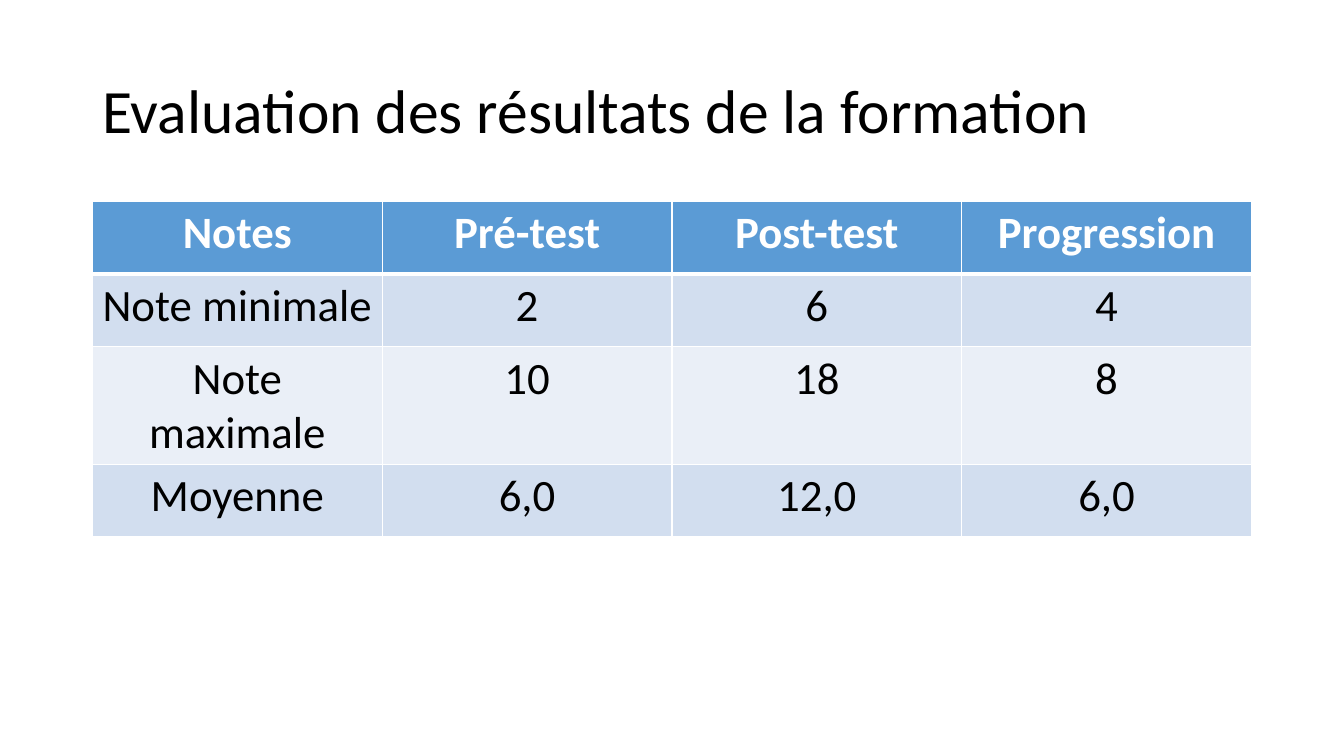
from dataclasses import dataclass

from lxml import etree
from pptx import Presentation
from pptx.dml.color import RGBColor
from pptx.enum.text import MSO_ANCHOR, PP_ALIGN
from pptx.oxml.ns import qn
from pptx.util import Cm, Pt

MIDDLE = MSO_ANCHOR.MIDDLE
CENTER = PP_ALIGN.CENTER
BLANK_LAYOUT = 6


@dataclass(frozen=True)
class Theme:
    """Colours, font and type sizes of the deck."""

    font: str = "Calibri"
    title_size: int = 44
    table_size: int = 32
    ink: str = "000000"
    paper: str = "FFFFFF"
    header: str = "5B9BD5"
    bands: tuple = ("D2DEEF", "EAEFF7")
    rule: float = 1
    header_rule: float = 3


@dataclass(frozen=True)
class Box:
    """A rectangle on the slide, in centimetres."""

    left: float
    top: float
    width: float
    height: float

    def lengths(self):
        """Return left, top, width and height as lengths."""
        return Cm(self.left), Cm(self.top), Cm(self.width), Cm(self.height)


THEME = Theme()
TITLE = "Evaluation des résultats de la formation"
SCORES = (
    ("Notes", "Pré-test", "Post-test", "Progression"),
    ("Note minimale", "2", "6", "4"),
    ("Note maximale", "10", "18", "8"),
    ("Moyenne", "6,0", "12,0", "6,0"),
)


def add_span(para, text, size, colour, bold=False):
    """Add one styled run to a paragraph."""
    span = para.add_run()
    span.text = text
    span.font.name = THEME.font
    span.font.size = Pt(size)
    span.font.bold = bold
    span.font.color.rgb = RGBColor.from_string(colour)


def set_borders(cell, bottom, top):
    """Draw the four borders of a table cell."""
    properties = cell._tc.get_or_add_tcPr()
    widths = {"a:lnL": THEME.rule, "a:lnR": THEME.rule, "a:lnT": top, "a:lnB": bottom}
    for position, (side, width) in enumerate(widths.items()):
        line = etree.Element(qn(side), w=str(Pt(width)))
        fill = etree.SubElement(line, qn("a:solidFill"))
        etree.SubElement(fill, qn("a:srgbClr"), val=THEME.paper)
        properties.insert(position, line)


def add_title(page, box):
    """Place the slide title in its box."""
    frame = page.shapes.add_textbox(*box.lengths()).text_frame
    frame.word_wrap = True
    frame.vertical_anchor = MIDDLE
    para = frame.paragraphs[0]
    para.line_spacing = 0.9
    add_span(para, TITLE, THEME.title_size, THEME.ink)


def add_scores(page, box):
    """Place the table of test scores in its box."""
    table = page.shapes.add_table(len(SCORES), len(SCORES[0]), *box.lengths()).table
    for row, values in enumerate(SCORES):
        is_header = row == 0
        colour = THEME.header if is_header else THEME.bands[(row - 1) % 2]
        ink = THEME.paper if is_header else THEME.ink
        bottom = THEME.header_rule if is_header else THEME.rule
        top = THEME.header_rule if row == 1 else THEME.rule
        for column, value in enumerate(values):
            cell = table.cell(row, column)
            cell.fill.solid()
            cell.fill.fore_color.rgb = RGBColor.from_string(colour)
            set_borders(cell, bottom, top)
            para = cell.text_frame.paragraphs[0]
            para.alignment = CENTER
            add_span(para, value, THEME.table_size, ink, is_header)


def main():
    """Build and save the deck."""
    deck = Presentation()
    deck.slide_width, deck.slide_height = Cm(33.87), Cm(19.05)
    page = deck.slides.add_slide(deck.slide_layouts[BLANK_LAYOUT])
    add_title(page, Box(2.33, 1.01, 29.21, 3.68))
    add_scores(page, Box(2.33, 5.07, 29.21, 7.32))
    deck.save("out.pptx")


if __name__ == "__main__":
    main()
